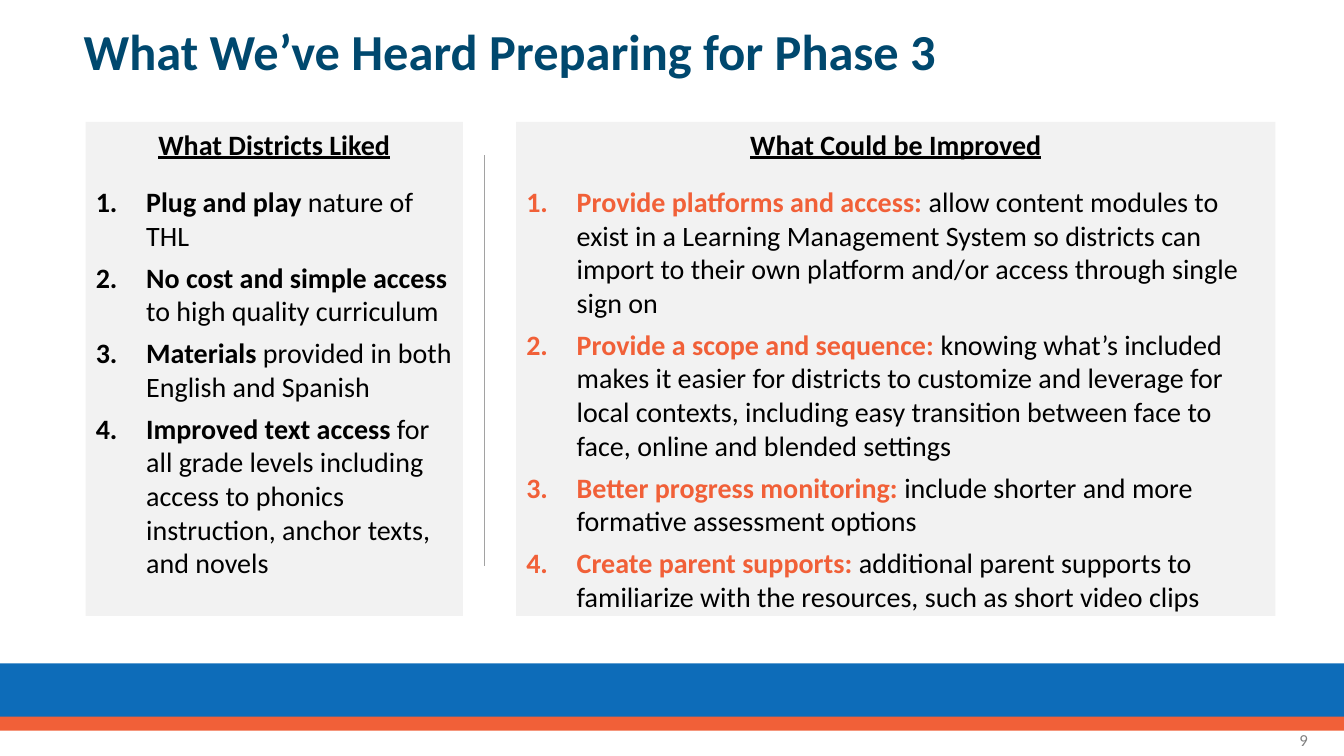
from dataclasses import dataclass

from lxml.etree import SubElement
from pptx import Presentation
from pptx.dml.color import RGBColor
from pptx.enum.shapes import MSO_CONNECTOR, MSO_SHAPE
from pptx.enum.text import MSO_ANCHOR, MSO_AUTO_SIZE, PP_ALIGN
from pptx.oxml.ns import qn
from pptx.slide import Slide
from pptx.text.text import _Paragraph, _Run
from pptx.util import Inches, Pt

FONT = "Calibri"
COLORS = {
    "title": "00486E",
    "text": "000000",
    "panel": "F2F2F2",
    "blue": "0D6CB9",
    "orange": "F16038",
    "divider": "A2A2A2",
    "number": "808080",
}
PANEL_TOP, PANEL_HEIGHT = 1.21, 4.9


@dataclass
class Panel:
    placeholder: int
    left: float
    width: float
    heading: str
    lead_color: str
    items: list[tuple[str, str]]


@dataclass
class Band:
    top: float
    height: float
    color: str


PANELS = [
    Panel(1, 0.85, 3.74, "What Districts Liked", "text", [
        ("Plug and play ", "nature of THL"),
        ("No cost and simple access ", "to high quality curriculum"),
        ("Materials ", "provided in both English and Spanish"),
        ("Improved text access ",
         "for all grade levels including access to phonics instruction, "
         "anchor texts, and novels"),
    ]),
    Panel(2, 5.12, 7.53, "What Could be Improved", "orange", [
        ("Provide platforms and access: ",
         "allow content modules to exist in a Learning Management System so "
         "districts can import to their own platform and/or access through "
         "single sign on"),
        ("Provide a scope and sequence: ",
         "knowing what’s included makes it easier for districts to customize "
         "and leverage for local contexts, including easy transition between "
         "face to face, online and blended settings"),
        ("Better progress monitoring: ",
         "include shorter and more formative assessment options"),
        ("Create parent supports: ",
         "additional parent supports to familiarize with the resources, "
         "such as short video clips"),
    ]),
]
BANDS = [Band(6.58, 0.58, "blue"), Band(7.11, 0.14, "orange")]


def rgb(name: str) -> RGBColor:
    return RGBColor.from_string(COLORS[name])


def format_run(run: _Run, size: float, color: str, bold: bool = False) -> None:
    run.font.name = FONT
    run.font.size = Pt(size)
    run.font.bold = bold
    run.font.color.rgb = rgb(color)


def place(shape, left: float, top: float, width: float, height: float) -> None:
    shape.left, shape.top = Inches(left), Inches(top)
    shape.width, shape.height = Inches(width), Inches(height)


def set_bullet(paragraph: _Paragraph, numbered: bool) -> None:
    """Number the paragraph with a hanging indent, or remove its bullet."""
    properties = paragraph._p.get_or_add_pPr()
    indent = Inches(0.5) if numbered else 0
    properties.set("marL", str(indent))
    properties.set("indent", str(-indent))
    if numbered:
        SubElement(properties, qn("a:buFont"), typeface=FONT)
        SubElement(properties, qn("a:buAutoNum"), type="arabicPeriod")
    else:
        SubElement(properties, qn("a:buNone"))


def add_title(slide: Slide, text: str) -> None:
    title = slide.shapes.title
    place(title, 0.73, 0.13, 13.29, 0.82)
    frame = title.text_frame
    frame.text = text
    frame.auto_size = MSO_AUTO_SIZE.NONE
    frame.vertical_anchor = MSO_ANCHOR.MIDDLE
    paragraph = frame.paragraphs[0]
    paragraph.alignment = PP_ALIGN.LEFT
    paragraph.line_spacing = 0.9
    format_run(paragraph.runs[0], 36, "title", bold=True)


def fill_panel(slide: Slide, panel: Panel) -> None:
    body = slide.placeholders[panel.placeholder]
    place(body, panel.left, PANEL_TOP, panel.width, PANEL_HEIGHT)
    body.fill.solid()
    body.fill.fore_color.rgb = rgb("panel")
    frame = body.text_frame
    frame.text = panel.heading
    frame.auto_size = MSO_AUTO_SIZE.NONE
    frame.vertical_anchor = MSO_ANCHOR.TOP

    heading = frame.paragraphs[0]
    set_bullet(heading, numbered=False)
    heading.alignment = PP_ALIGN.CENTER
    heading.space_before = Pt(0)
    heading.space_after = Pt(17)
    format_run(heading.runs[0], 20, "text", bold=True)
    heading.runs[0].font.underline = True

    for lead, detail in panel.items:
        paragraph = frame.add_paragraph()
        set_bullet(paragraph, numbered=True)
        paragraph.space_before = Pt(0)
        paragraph.space_after = Pt(6)
        for text, color, bold in ((lead, panel.lead_color, True),
                                  (detail, "text", False)):
            run = paragraph.add_run()
            run.text = text
            format_run(run, 20, color, bold)


def add_divider(slide: Slide) -> None:
    divider = slide.shapes.add_connector(
        MSO_CONNECTOR.STRAIGHT,
        Inches(4.8), Inches(1.54), Inches(4.8), Inches(5.62))
    divider.line.color.rgb = rgb("divider")
    divider.line.width = Pt(0.5)
    SubElement(divider._element.spPr, qn("a:effectLst"))


def add_band(slide: Slide, band: Band, width: int) -> None:
    shape = slide.shapes.add_shape(
        MSO_SHAPE.RECTANGLE, 0, Inches(band.top), width, Inches(band.height))
    shape.shadow.inherit = False
    shape.fill.solid()
    shape.fill.fore_color.rgb = rgb(band.color)
    shape.line.fill.background()


def add_slide_number(slide: Slide, number: str) -> None:
    box = slide.shapes.add_textbox(
        Inches(10.07), Inches(7.14), Inches(3), Inches(0.4))
    frame = box.text_frame
    frame.word_wrap = True
    frame.vertical_anchor = MSO_ANCHOR.MIDDLE
    frame.text = number
    paragraph = frame.paragraphs[0]
    paragraph.alignment = PP_ALIGN.RIGHT
    format_run(paragraph.runs[0], 12, "number")


def main() -> None:
    presentation = Presentation()
    presentation.slide_width = Inches(13.33)
    presentation.slide_height = Inches(7.5)
    two_content = presentation.slide_layouts.get_by_name("Two Content")
    slide = presentation.slides.add_slide(two_content)

    add_title(slide, "What We’ve Heard Preparing for Phase 3")
    for panel in PANELS:
        fill_panel(slide, panel)
    add_divider(slide)
    for band in BANDS:
        add_band(slide, band, presentation.slide_width)
    add_slide_number(slide, "9")
    presentation.save("out.pptx")


if __name__ == "__main__":
    main()
